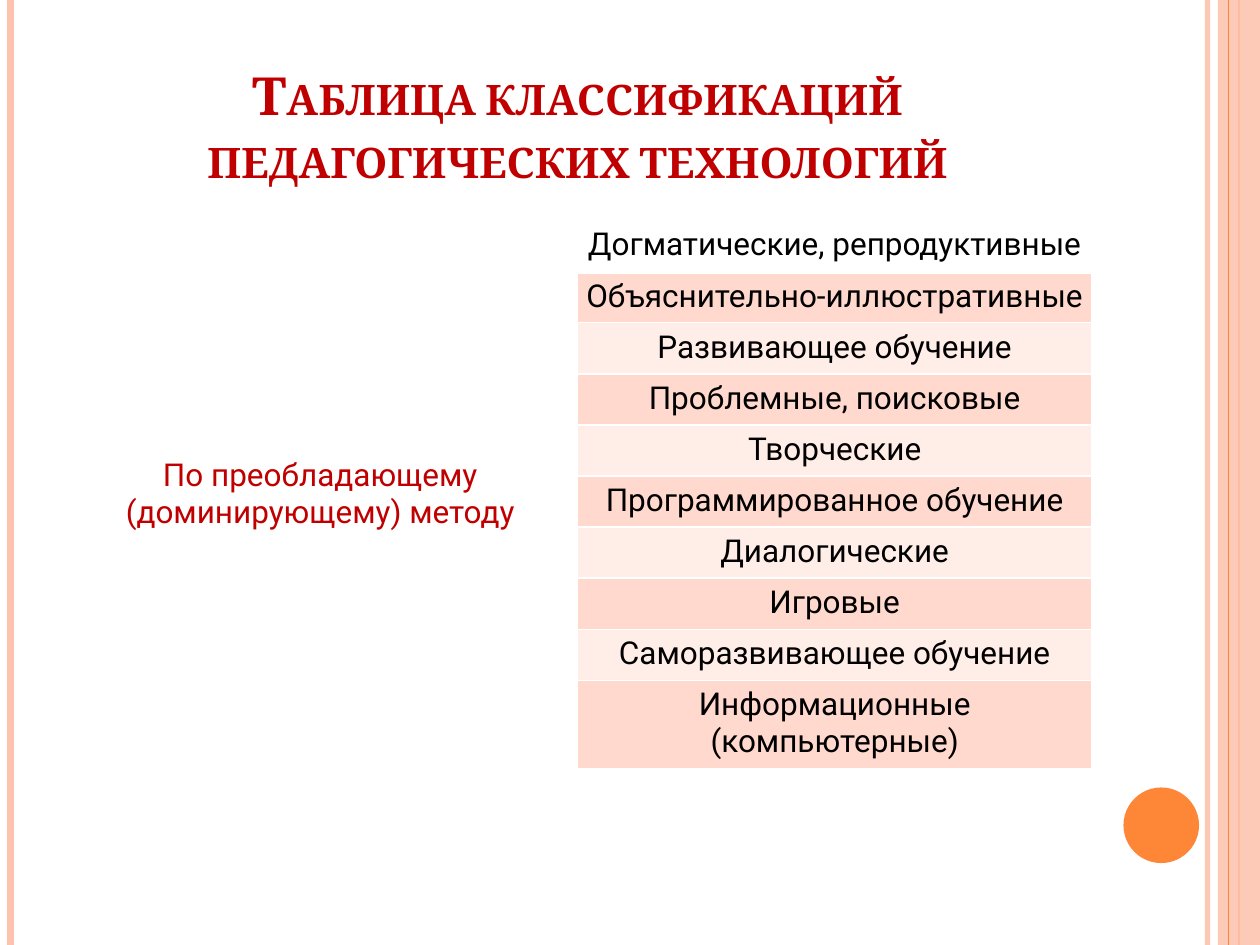
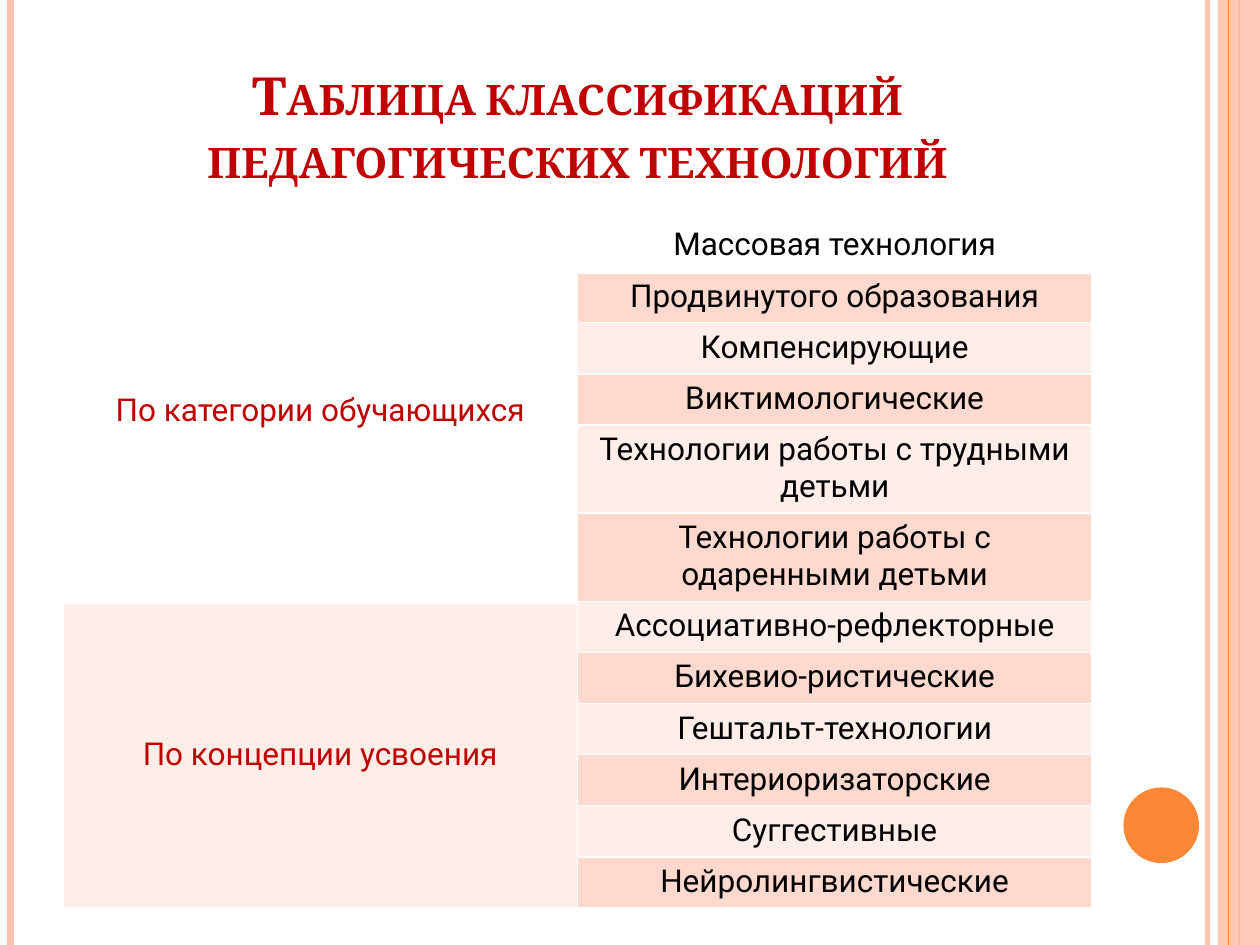
"""Builds two slides with classification tables of pedagogical technologies."""
from dataclasses import dataclass

from lxml.etree import SubElement
from pptx import Presentation
from pptx.dml.color import RGBColor
from pptx.enum.shapes import MSO_CONNECTOR, MSO_SHAPE
from pptx.enum.text import MSO_ANCHOR, PP_ALIGN
from pptx.oxml import parse_xml
from pptx.oxml.ns import nsdecls, qn
from pptx.util import Pt


@dataclass(frozen=True)
class Theme:
    accent: str = "FE8637"
    peach: str = "FEC3AE"
    heading: str = "C00000"
    body: str = "000000"
    white: str = "FFFFFF"
    dark_row: str = "FFD9CE"
    light_row: str = "FFEDE8"
    title_font: str = "Cambria"
    table_font: str = "Roboto"
    title_size: int = 30
    table_size: int = 18
    width: int = 720
    height: int = 540
    left: int = 36
    content_width: int = 588
    row_height: float = 29.2


class Deck:
    def __init__(self, theme):
        self.theme = theme
        self.presentation = Presentation()
        self.presentation.slide_width = Pt(theme.width)
        self.presentation.slide_height = Pt(theme.height)
        self.slide = None

    def new_slide(self):
        self.slide = self.presentation.slides.add_slide(self.presentation.slide_layouts[6])

    def set_alpha(self, shape, percent):
        for color in shape._element.spPr.iter(qn("a:srgbClr")):
            SubElement(color, qn("a:alpha")).set("val", str(percent * 1000))

    def stripe(self, x, color, width, alpha=100):
        line = self.slide.shapes.add_connector(
            MSO_CONNECTOR.STRAIGHT, Pt(x), Pt(0), Pt(x), Pt(self.theme.height))
        line.line.color.rgb = RGBColor.from_string(color)
        line.line.width = Pt(width)
        SubElement(line._element.spPr, qn("a:effectLst"))
        if alpha < 100:
            self.set_alpha(line, alpha)

    def solid(self, preset, x, y, width, height, color, alpha=100):
        shape = self.slide.shapes.add_shape(preset, Pt(x), Pt(y), Pt(width), Pt(height))
        shape.shadow.inherit = False
        shape.fill.solid()
        shape.fill.fore_color.rgb = RGBColor.from_string(color)
        shape.line.fill.background()
        if alpha < 100:
            self.set_alpha(shape, alpha)

    def frame(self):
        theme = self.theme
        self.stripe(690, theme.peach, 3, alpha=93)
        self.stripe(6, theme.peach, 4.5)
        self.stripe(708, theme.accent, 1.5)
        self.solid(MSO_SHAPE.RECTANGLE, 696, 0, 24, theme.height, theme.peach, alpha=87)
        self.stripe(702, theme.accent, 0.75)
        self.solid(MSO_SHAPE.OVAL, 642, 450, 43.2, 43.2, theme.accent)

    def style_text(self, paragraph, font_name, size, color, bold=False):
        paragraph.alignment = PP_ALIGN.CENTER
        for run in paragraph.runs:
            run.font.name = font_name
            run.font.size = Pt(size)
            run.font.bold = bold
            run.font.color.rgb = RGBColor.from_string(color)

    def title(self, text):
        theme = self.theme
        title = self.slide.shapes.add_textbox(
            Pt(theme.left), Pt(21.6), Pt(theme.content_width), Pt(90)).text_frame
        title.word_wrap = True
        title.vertical_anchor = MSO_ANCHOR.BOTTOM
        title.text = text
        heading = title.paragraphs[0]
        self.style_text(heading, theme.title_font, theme.title_size, theme.heading, bold=True)
        heading.runs[0]._r.get_or_add_rPr().set("cap", "small")

    def style_cell(self, cell, fill, bottom_border):
        cell.margin_left = cell.margin_right = Pt(3.6)
        cell.margin_top = cell.margin_bottom = Pt(3.6)
        cell.fill.solid()
        cell.fill.fore_color.rgb = RGBColor.from_string(fill)
        properties = cell._tc.get_or_add_tcPr()
        borders = {"lnL": 1, "lnR": 1, "lnT": 1, "lnB": bottom_border}
        for position, (side, width) in enumerate(borders.items()):
            properties.insert(position, parse_xml(
                f'<a:{side} {nsdecls("a")} w="{Pt(width)}"><a:solidFill>'
                f'<a:srgbClr val="{self.theme.white}"/></a:solidFill></a:{side}>'))

    def row_fill(self, row):
        if row == 0:
            return self.theme.white
        return self.theme.dark_row if row % 2 else self.theme.light_row

    def cell_text(self, cell, text, color):
        cell.text = text
        self.style_text(cell.text_frame.paragraphs[0], self.theme.table_font,
                        self.theme.table_size, color)

    def classification(self, groups):
        theme = self.theme
        row_count = sum(len(technologies) for technologies in groups.values())
        table = self.slide.shapes.add_table(
            row_count, 2, Pt(theme.left), Pt(126), Pt(theme.content_width),
            Pt(theme.row_height * row_count)).table
        table.first_row = table.horz_banding = False
        for row in table.rows:
            row.height = Pt(theme.row_height)
        start = 0
        for criterion, technologies in groups.items():
            end = start + len(technologies) - 1
            bottom_border = 1 if start else 3
            for row, technology in enumerate(technologies, start):
                self.style_cell(table.cell(row, 0), self.row_fill(start), bottom_border)
                self.style_cell(table.cell(row, 1), self.row_fill(row), 1 if row else 3)
                self.cell_text(table.cell(row, 1), technology, theme.body)
            label = table.cell(start, 0)
            label.merge(table.cell(end, 0))
            label.vertical_anchor = MSO_ANCHOR.MIDDLE
            self.cell_text(label, criterion, theme.heading)
            start = end + 1


TITLE = "Таблица классификаций педагогических технологий"

CLASSIFICATIONS = [
    {
        "По преобладающему (доминирующему) методу": [
            "Догматические, репродуктивные",
            "Объяснительно-иллюстративные",
            "Развивающее обучение",
            "Проблемные, поисковые",
            "Творческие",
            "Программированное обучение",
            "Диалогические",
            "Игровые",
            "Саморазвивающее обучение",
            "Информационные (компьютерные)",
        ],
    },
    {
        "По категории обучающихся": [
            "Массовая технология",
            "Продвинутого образования",
            "Компенсирующие",
            "Виктимологические",
            "Технологии работы с трудными детьми",
            "Технологии работы с одаренными детьми",
        ],
        "По концепции усвоения": [
            "Ассоциативно-рефлекторные",
            "Бихевио-ристические",
            "Гештальт-технологии",
            "Интериоризаторские",
            "Суггестивные",
            "Нейролингвистические",
        ],
    },
]


def main():
    deck = Deck(Theme())
    for groups in CLASSIFICATIONS:
        deck.new_slide()
        deck.frame()
        deck.title(TITLE)
        deck.classification(groups)
    deck.presentation.save("out.pptx")


if __name__ == "__main__":
    main()
